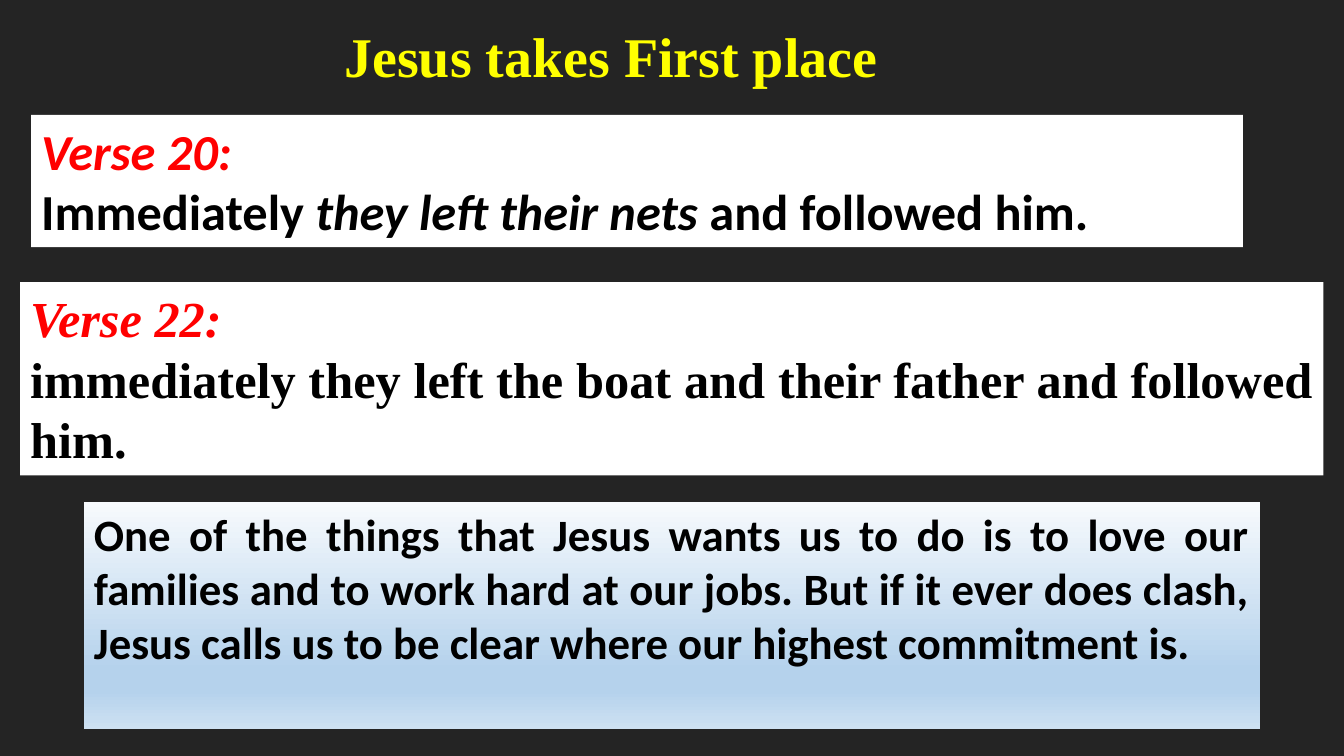
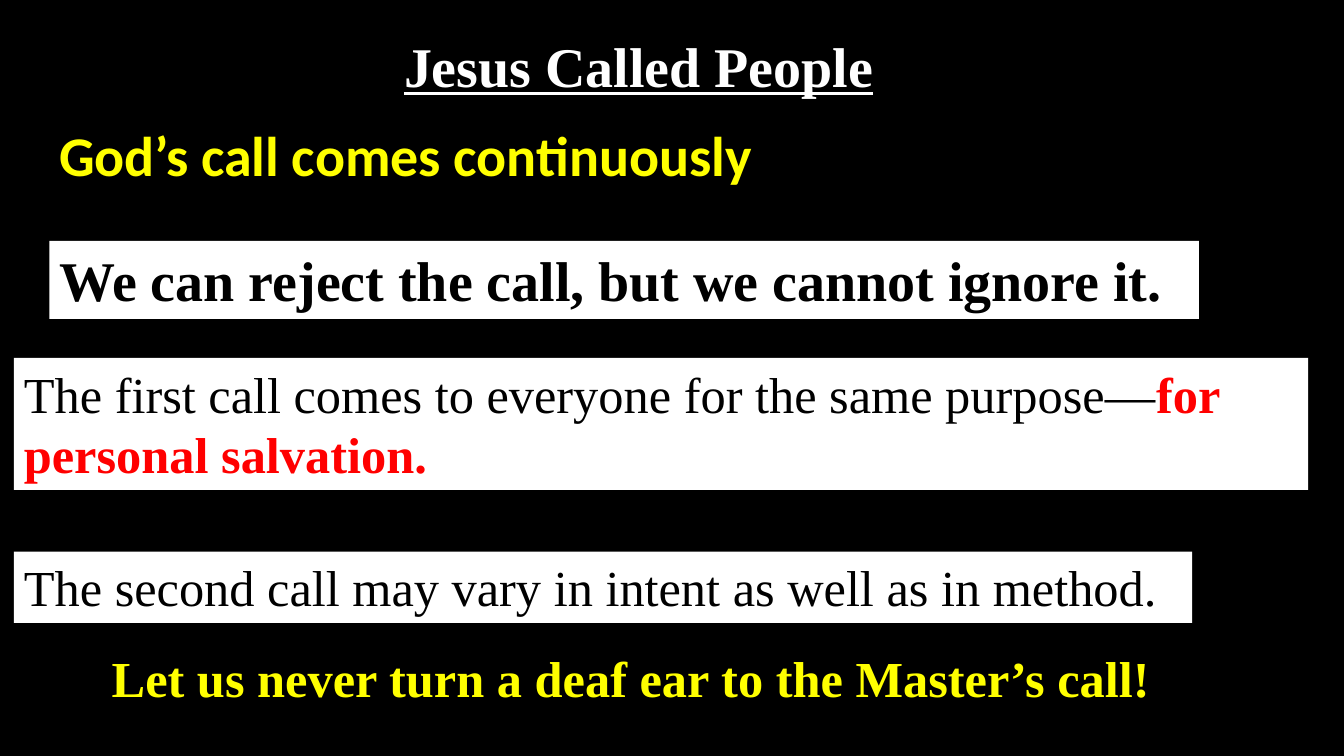
from lxml import etree
from pptx import Presentation
from pptx.dml.color import RGBColor
from pptx.enum.shapes import MSO_SHAPE
from pptx.enum.text import MSO_ANCHOR, PP_ALIGN
from pptx.oxml.ns import qn
from pptx.util import Pt

RECTANGLE = MSO_SHAPE.RECTANGLE
TOP = MSO_ANCHOR.TOP
LEFT, CENTER, JUSTIFY = PP_ALIGN.LEFT, PP_ALIGN.CENTER, PP_ALIGN.JUSTIFY

BLACK = RGBColor(0x00, 0x00, 0x00)
CHARCOAL = RGBColor(0x24, 0x24, 0x24)
WHITE = RGBColor(0xFF, 0xFF, 0xFF)
YELLOW = RGBColor(0xFF, 0xFF, 0x00)
RED = RGBColor(0xFF, 0x00, 0x00)
# Gradient stops: percentage and colour
SKY = [
    (0, RGBColor(0xF7, 0xFA, 0xFD)),
    (74, RGBColor(0xB5, 0xD2, 0xEC)),
    (83, RGBColor(0xB5, 0xD2, 0xEC)),
    (100, RGBColor(0xCE, 0xE1, 0xF2)),
]

SERIF = "Times New Roman"
SANS = "Calibri"
TITLE_SIZE = 40
BODY_SIZE = 36


class Deck:
    """Holds the shared style and the current slide."""

    def __init__(self):
        self.presentation = Presentation()
        self.presentation.slide_width = Pt(960)
        self.presentation.slide_height = Pt(540)
        self.slide = None

    def new_slide(self, background):
        layout = self.presentation.slide_layouts[6]
        self.slide = self.presentation.slides.add_slide(layout)
        fill = self.slide.background.fill
        fill.solid()
        fill.fore_color.rgb = background

    def add_paragraphs(self, shape, paragraphs, font=SERIF, size=BODY_SIZE,
                       align=LEFT, line_spacing=None):
        """Each paragraph is a list of (text, colour, styles) runs."""
        frame = shape.text_frame
        frame.word_wrap = True
        frame.vertical_anchor = TOP
        for index, runs in enumerate(paragraphs):
            paragraph = frame.add_paragraph() if index else frame.paragraphs[0]
            paragraph.alignment = align
            if line_spacing:
                paragraph.line_spacing = Pt(line_spacing)
            for text, color, styles in runs:
                run = paragraph.add_run()
                run.text = text
                run.font.name = font
                run.font.size = Pt(size)
                run.font.color.rgb = color
                run.font.bold = "b" in styles
                run.font.italic = "i" in styles
                run.font.underline = "u" in styles

    def text(self, left, top, width, height, paragraphs, **style):
        box = self.slide.shapes.add_textbox(
            Pt(left), Pt(top), Pt(width), Pt(height))
        self.add_paragraphs(box, paragraphs, **style)

    def title(self, left, top, width, runs, align=LEFT):
        self.text(left, top, width, 55.4, [runs], size=TITLE_SIZE, align=align)

    def panel(self, left, top, width, height, paragraphs, stops=None, **style):
        shape = self.slide.shapes.add_shape(
            RECTANGLE, Pt(left), Pt(top), Pt(width), Pt(height))
        shape.shadow.inherit = False
        shape.line.fill.background()
        if stops:
            self.gradient(shape, stops)
        else:
            shape.fill.solid()
            shape.fill.fore_color.rgb = WHITE
        self.add_paragraphs(shape, paragraphs, **style)

    def gradient(self, shape, stops):
        """Fill from top to bottom."""
        shape.fill.gradient()
        shape.fill.gradient_angle = 270
        stop_list = next(shape.element.iter(qn("a:gsLst")))
        for stop in list(stop_list):
            stop_list.remove(stop)
        for percent, color in stops:
            stop = etree.SubElement(
                stop_list, qn("a:gs"), pos=str(percent * 1000))
            etree.SubElement(stop, qn("a:srgbClr"), val=str(color))

    def save(self):
        self.presentation.save("out.pptx")


def first_place(deck):
    deck.new_slide(CHARCOAL)
    deck.title(43.2, 12.2, 796.3,
               [("Jesus takes First place ", YELLOW, "b")], align=CENTER)

    # Bible verses
    deck.panel(22.3, 82, 865.5, 94.5, [
        [("Verse 20:", RED, "bi")],
        [("Immediately ", BLACK, "b"),
         ("they left their nets", BLACK, "bi"),
         (" and followed him.", BLACK, "b")],
    ], font=SANS)
    deck.panel(14.4, 201.6, 931, 138, [
        [("Verse 22:", RED, "bi")],
        [("immediately they left the boat and their father and followed him.",
          BLACK, "b")],
    ], align=JUSTIFY)

    # Application
    deck.panel(60, 358.5, 840, 162.5, [
        [("One of the things that Jesus wants us to do is to love our families "
          "and to work hard at our jobs. But if it ever does clash, Jesus calls "
          "us to be clear where our highest commitment is.", BLACK, "b")],
    ], stops=SKY, font=SANS, size=32, align=JUSTIFY)


def called_people(deck):
    deck.new_slide(BLACK)
    deck.title(281.5, 18.7, 353.5, [("Jesus Called People", WHITE, "bu")])
    deck.text(35.3, 118.8, 580.3, 19.4,
              [[("God’s call comes continuously", YELLOW, "b")]],
              font=SANS, size=TITLE_SIZE, line_spacing=12)

    # Statements about the call
    deck.panel(35.3, 172, 821, 55.7, [
        [("We can reject the call, but we cannot ignore it.", BLACK, "b")],
    ], size=TITLE_SIZE)
    deck.panel(10, 255.6, 924.5, 94.4, [
        [("The first call comes to everyone for the same purpose—", BLACK, ""),
         ("for personal salvation.", RED, "b")],
    ])
    deck.panel(10, 394, 841.5, 51, [
        [("The second call may vary in intent as well as in method.",
          BLACK, "")],
    ])

    # Closing appeal
    deck.text(72.7, 489.6, 780, 19.4,
              [[("Let us never turn a deaf ear to the Master’s call!",
                 YELLOW, "b")]], line_spacing=12)


def main():
    deck = Deck()
    first_place(deck)
    called_people(deck)
    deck.save()


if __name__ == "__main__":
    main()
